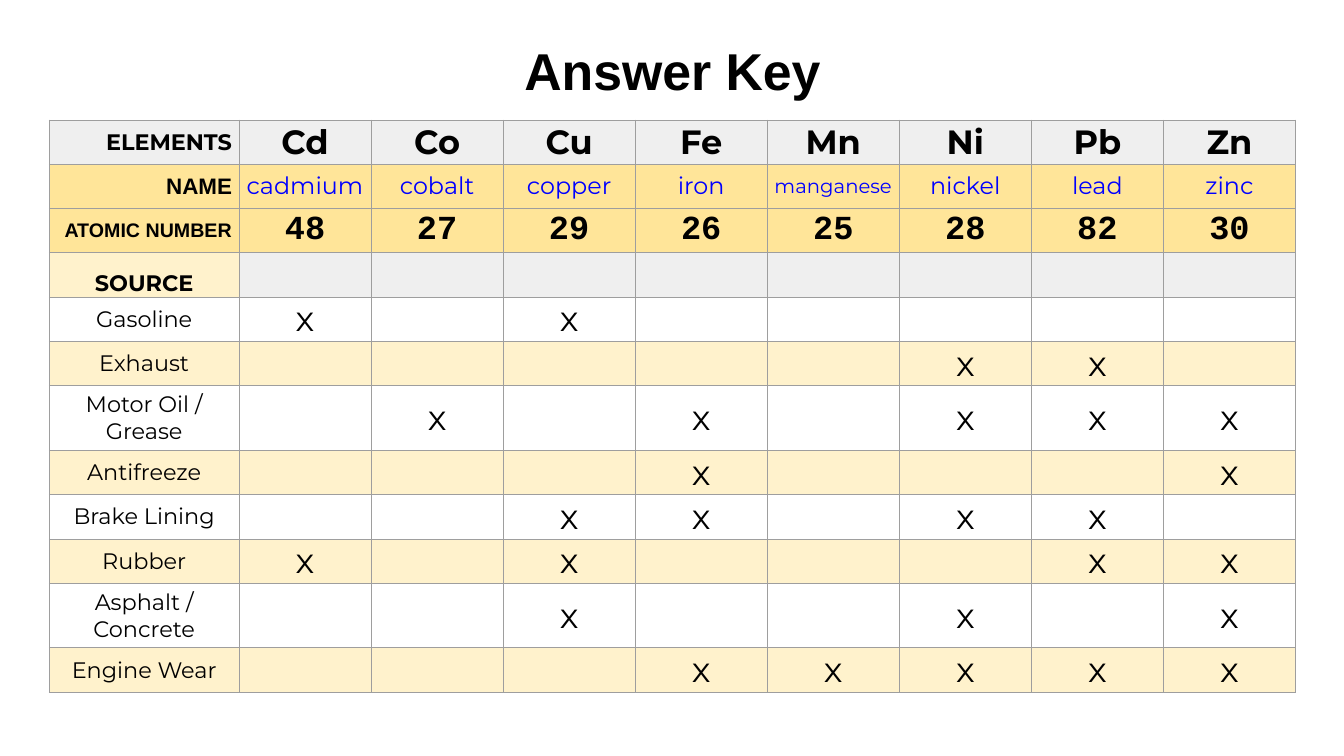
from lxml.etree import SubElement
from pptx import Presentation
from pptx.dml.color import RGBColor
from pptx.enum.text import MSO_ANCHOR as Anchor, PP_ALIGN as Align
from pptx.oxml.ns import qn
from pptx.util import Inches, Pt

BLACK, WHITE, BLUE = "000000", "FFFFFF", "0000FF"
GRAY, GOLD, CREAM, BORDER = "EFEFEF", "FFE599", "FFF2CC", "9E9E9E"
SANS, MONO, DISPLAY = "Arial", "Courier New", "Montserrat"

ELEMENTS = [
    ("Cd", "cadmium", "48"), ("Co", "cobalt", "27"),
    ("Cu", "copper", "29"), ("Fe", "iron", "26"),
    ("Mn", "manganese", "25"), ("Ni", "nickel", "28"),
    ("Pb", "lead", "82"), ("Zn", "zinc", "30"),
]
SOURCES = {
    "Gasoline": "Cd Cu",
    "Exhaust": "Ni Pb",
    "Motor Oil / Grease": "Co Fe Ni Pb Zn",
    "Antifreeze": "Fe Zn",
    "Brake Lining": "Cu Fe Ni Pb",
    "Rubber": "Cd Cu Pb Zn",
    "Asphalt / Concrete": "Cu Ni Zn",
    "Engine Wear": "Fe Mn Ni Pb Zn",
}


def color(value):
    return RGBColor.from_string(value)


class AnswerSlide:
    """Holds the slide and the shared styling of its title and table."""

    def __init__(self, presentation):
        self.slide = presentation.slides.add_slide(presentation.slide_layouts[5])

    def set_text(self, frame, text, size, font, ink=BLACK, bold=False, align=Align.CENTER):
        paragraph = frame.paragraphs[0]
        paragraph.text = text
        paragraph.alignment = align
        paragraph.font.size = Pt(size)
        paragraph.font.name = font
        paragraph.font.bold = bold
        paragraph.font.color.rgb = color(ink)
        return paragraph

    def title(self, text, left, top, width, height):
        shape = self.slide.shapes.title
        shape.left, shape.top = Inches(left), Inches(top)
        shape.width, shape.height = Inches(width), Inches(height)
        shape.text_frame.vertical_anchor = Anchor.MIDDLE
        self.set_text(shape.text_frame, text, 37, SANS, bold=True).line_spacing = 0.9

    def table(self, left, top, widths, heights):
        shape = self.slide.shapes.add_table(
            len(heights), len(widths), Inches(left), Inches(top),
            Inches(sum(widths)), Inches(sum(heights)))
        table = shape.table
        for column, width in zip(table.columns, widths):
            column.width = Inches(width)
        for row, height in zip(table.rows, heights):
            row.height = Inches(height)
        return table

    def cell(self, cell, fill, text="", anchor=Anchor.MIDDLE, **style):
        cell.margin_left = cell.margin_right = Inches(0.07)
        cell.margin_top = cell.margin_bottom = 0
        cell.vertical_anchor = anchor
        self.borders(cell)
        cell.fill.solid()
        cell.fill.fore_color.rgb = color(fill)
        if text:
            self.set_text(cell.text_frame, text, **style)

    def borders(self, cell):
        properties = cell._tc.get_or_add_tcPr()
        for side in ("a:lnL", "a:lnR", "a:lnT", "a:lnB"):
            line = SubElement(properties, qn(side), w=str(Pt(0.75)))
            solid = SubElement(line, qn("a:solidFill"))
            SubElement(solid, qn("a:srgbClr"), val=BORDER)


def main():
    presentation = Presentation()
    presentation.slide_width = Inches(13.33)
    presentation.slide_height = Inches(7.5)
    answer = AnswerSlide(presentation)
    answer.title("Answer Key", 0.92, 0.4, 11.5, 0.67)

    heights = [0.44] * 4 + [0.64 if "/" in source else 0.44 for source in SOURCES]
    table = answer.table(0.49, 1.19, [1.88] + [1.31] * len(ELEMENTS), heights)

    labels = [("ELEMENTS", 16, DISPLAY, GRAY), ("NAME", 16, SANS, GOLD),
              ("ATOMIC NUMBER", 14, SANS, GOLD)]
    for row, (label, size, font, fill) in enumerate(labels):
        answer.cell(table.cell(row, 0), fill, label, size=size, font=font,
                    bold=True, align=Align.RIGHT)
    answer.cell(table.cell(3, 0), CREAM, "SOURCE", Anchor.BOTTOM,
                size=16, font=DISPLAY, bold=True)

    for column, (symbol, name, number) in enumerate(ELEMENTS, 1):
        answer.cell(table.cell(0, column), GRAY, symbol, size=24, font=DISPLAY, bold=True)
        answer.cell(table.cell(1, column), GOLD, name, size=14 if len(name) > 8 else 17,
                    font=DISPLAY, ink=BLUE)
        answer.cell(table.cell(2, column), GOLD, number, size=24, font=MONO, bold=True)
        answer.cell(table.cell(3, column), GRAY)

    for row, (source, found) in enumerate(SOURCES.items(), 4):
        fill = CREAM if row % 2 else WHITE
        answer.cell(table.cell(row, 0), fill, source, size=16, font=DISPLAY)
        for column, (symbol, _, _) in enumerate(ELEMENTS, 1):
            mark = "x" if symbol in found.split() else ""
            answer.cell(table.cell(row, column), fill, mark, size=25, font=DISPLAY)

    presentation.save("out.pptx")


if __name__ == "__main__":
    main()
